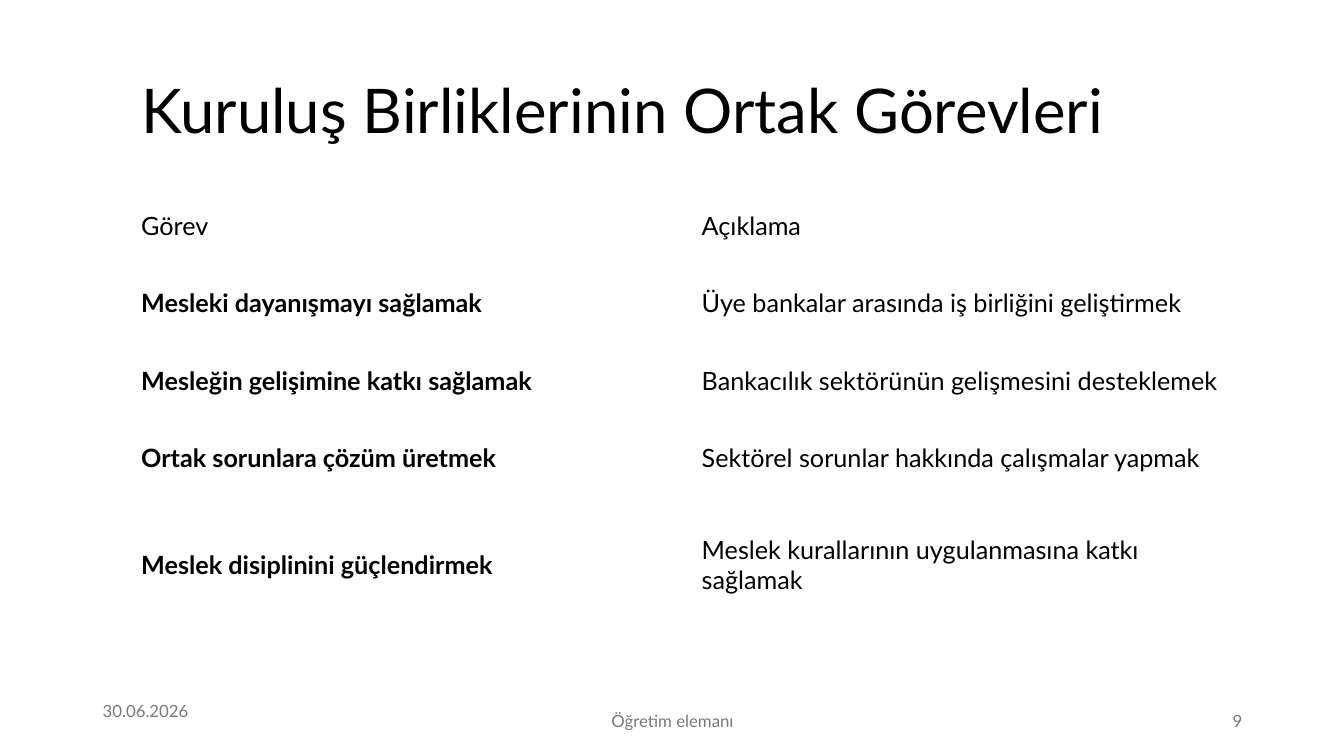
from dataclasses import dataclass

from pptx import Presentation
from pptx.dml.color import RGBColor
from pptx.enum.text import MSO_ANCHOR, PP_ALIGN
from pptx.util import Inches, Pt


@dataclass(frozen=True)
class Theme:
    face: str = "Lato"
    ink: str = "000000"
    muted: str = "797979"
    paper: str = "FFFFFF"
    head: int = 44
    body: int = 18
    small: int = 12


THEME = Theme()
LEFT, WIDTH = 1.3, 11.12
ROWS = [
    ("Görev", "Açıklama"),
    ("Mesleki dayanışmayı sağlamak",
     "Üye bankalar arasında iş birliğini geliştirmek"),
    ("Mesleğin gelişimine katkı sağlamak",
     "Bankacılık sektörünün gelişmesini desteklemek"),
    ("Ortak sorunlara çözüm üretmek",
     "Sektörel sorunlar hakkında çalışmalar yapmak"),
    ("Meslek disiplinini güçlendirmek",
     "Meslek kurallarının uygulanmasına katkı sağlamak"),
]
HEIGHTS = [0.77] * 4 + [1.35]
FOOTER = [
    ("30.06.2026", 0.92, 6.85, 3, PP_ALIGN.LEFT),
    ("Öğretim elemanı", 4.42, 6.95, 4.5, PP_ALIGN.CENTER),
    ("9", 9.42, 6.95, 3, PP_ALIGN.RIGHT),
]


def write(frame, text, size, color=THEME.ink, align=PP_ALIGN.LEFT, bold=False):
    """Fill a text frame with one styled paragraph and return it."""
    frame.word_wrap = True
    para = frame.paragraphs[0]
    para.text = text
    para.alignment = align
    font = para.font
    font.name, font.size, font.bold = THEME.face, Pt(size), bold
    font.color.rgb = RGBColor.from_string(color)
    return para


def add_title(slide, text):
    title = slide.shapes.title
    title.left, title.top = Inches(LEFT), Inches(0.4)
    title.width, title.height = Inches(WIDTH), Inches(1.45)
    frame = title.text_frame
    frame.vertical_anchor = MSO_ANCHOR.MIDDLE
    write(frame, text, THEME.head).line_spacing = 0.9


def add_duties(slide):
    table = slide.shapes.add_table(
        len(ROWS), 2, Inches(LEFT), Inches(1.85),
        Inches(WIDTH), Inches(sum(HEIGHTS))).table
    table.first_row = table.horz_banding = False
    for r, (row, height) in enumerate(zip(ROWS, HEIGHTS)):
        table.rows[r].height = Inches(height)
        for c, text in enumerate(row):
            cell = table.cell(r, c)
            cell.fill.solid()
            cell.fill.fore_color.rgb = RGBColor.from_string(THEME.paper)
            cell.vertical_anchor = MSO_ANCHOR.MIDDLE
            write(cell.text_frame, text, THEME.body, bold=r > 0 and c == 0)


def add_note(slide, text, left, top, width, align):
    box = slide.shapes.add_textbox(
        Inches(left), Inches(top), Inches(width), Inches(0.4))
    box.text_frame.vertical_anchor = MSO_ANCHOR.MIDDLE
    write(box.text_frame, text, THEME.small, THEME.muted, align)


def main():
    deck = Presentation()
    deck.slide_width, deck.slide_height = Inches(13.33), Inches(7.5)
    slide = deck.slides.add_slide(deck.slide_layouts.get_by_name("Title Only"))
    add_title(slide, "Kuruluş Birliklerinin Ortak Görevleri")
    add_duties(slide)
    for note in FOOTER:
        add_note(slide, *note)
    deck.save("out.pptx")


if __name__ == "__main__":
    main()
